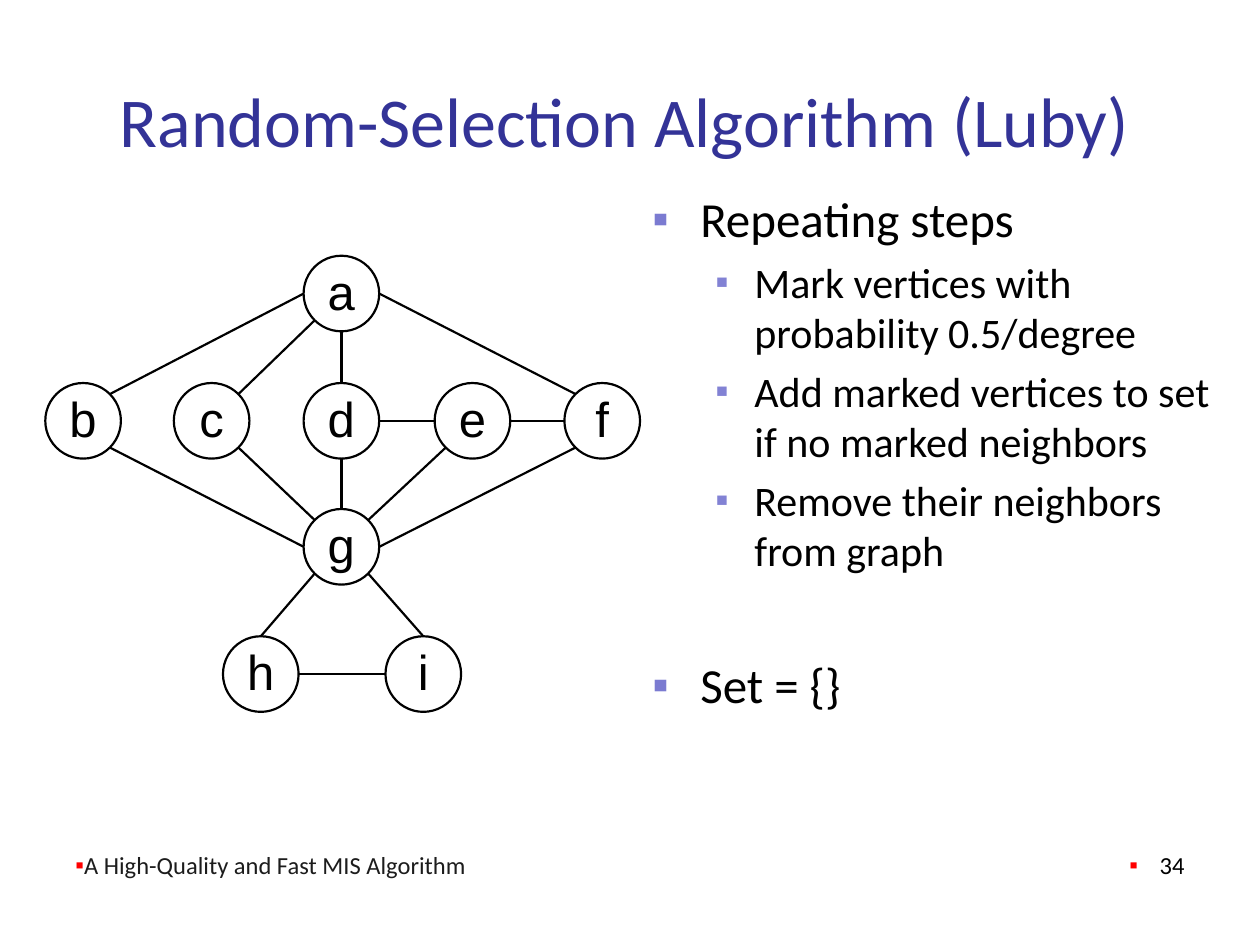
from dataclasses import dataclass
from math import sqrt
from typing import NamedTuple, Optional

from lxml import etree
from pptx import Presentation
from pptx.dml.color import RGBColor
from pptx.enum.shapes import MSO_CONNECTOR, MSO_SHAPE
from pptx.enum.text import MSO_ANCHOR, PP_ALIGN
from pptx.oxml.ns import qn
from pptx.util import Inches, Pt

STRAIGHT, OVAL = MSO_CONNECTOR.STRAIGHT, MSO_SHAPE.OVAL
TOP, MIDDLE, BOTTOM = MSO_ANCHOR.TOP, MSO_ANCHOR.MIDDLE, MSO_ANCHOR.BOTTOM
LEFT, CENTER, RIGHT = PP_ALIGN.LEFT, PP_ALIGN.CENTER, PP_ALIGN.RIGHT


@dataclass(frozen=True)
class Theme:
    title: str = "333397"
    ink: str = "000000"
    footer: str = "1C1C1C"
    bullet_1: str = "7B7BD1"
    bullet_2: str = "8282D4"
    bullet_footer: str = "FF0000"
    font: str = "Calibri"
    node_font: str = "Arial"
    title_size: int = 40
    body_size: int = 28
    sub_size: int = 24
    footer_size: int = 14
    line_width: float = 1.25


class Bullet(NamedTuple):
    color: str
    percent: int
    margin: float
    hanging: float


class Para(NamedTuple):
    text: str
    size: int
    color: str
    bullet: Optional[Bullet] = None
    before: float = 0
    level: int = 0
    align: PP_ALIGN = LEFT


class Node(NamedTuple):
    left: float
    top: float


class Edge(NamedTuple):
    start: str
    start_site: str
    end: str
    end_site: str


THEME = Theme()
DIAMETER = 0.6

# Graph: vertices by their top left corner, edges by compass point on the rim
ROWS = (2.03, 3.04, 4.04, 5.05)
NODES = {
    "a": Node(2.41, ROWS[0]),
    "b": Node(0.36, ROWS[1]),
    "c": Node(1.38, ROWS[1]),
    "d": Node(2.41, ROWS[1]),
    "e": Node(3.45, ROWS[1]),
    "f": Node(4.48, ROWS[1]),
    "g": Node(2.41, ROWS[2]),
    "h": Node(1.77, ROWS[3]),
    "i": Node(3.06, ROWS[3]),
}
EDGES = [Edge(*e.split()) for e in (
    "a W b NE", "a SW c NE", "a S d N", "a E f NW",
    "d E e W", "e E f W",
    "b SE g W", "c SE g NW", "d S g N", "e SW g NE", "f SW g E",
    "g SW h N", "g SE i N", "h E i W",
)]

# Text
LEVEL_1 = Bullet(THEME.bullet_1, 95, 0.38, 0.38)
LEVEL_2 = Bullet(THEME.bullet_2, 90, 0.81, 0.31)
STEPS = (
    "Mark vertices with probability 0.5/degree",
    "Add marked vertices to set if no marked neighbors",
    "Remove their neighbors from graph",
)
BODY = [
    Para("Repeating steps", THEME.body_size, THEME.ink, LEVEL_1),
    *(Para(s, THEME.sub_size, THEME.ink, LEVEL_2, 4.8, 1) for s in STEPS),
    Para("Set = {}", THEME.body_size, THEME.ink, LEVEL_1, 45.4),
]


def rim_point(node: Node, site: str) -> tuple[float, float]:
    """Point on a vertex's circle in the given compass direction."""
    dx = ("E" in site) - ("W" in site)
    dy = ("S" in site) - ("N" in site)
    r = DIAMETER / 2
    reach = r / sqrt(dx * dx + dy * dy)
    return node.left + r + dx * reach, node.top + r + dy * reach


def add_edge(s, edge: Edge) -> None:
    begin = rim_point(NODES[edge.start], edge.start_site)
    end = rim_point(NODES[edge.end], edge.end_site)
    line = s.shapes.add_connector(STRAIGHT, *map(Inches, begin + end))
    line.line.color.rgb = RGBColor.from_string(THEME.ink)
    line.line.width = Pt(THEME.line_width)
    etree.SubElement(line._element.spPr, qn("a:effectLst"))


def set_bullet(p, bullet: Bullet) -> None:
    pPr = p._p.get_or_add_pPr()
    pPr.set("marL", str(Inches(bullet.margin)))
    pPr.set("indent", str(-Inches(bullet.hanging)))
    color = etree.SubElement(pPr, qn("a:buClr"))
    etree.SubElement(color, qn("a:srgbClr"), val=bullet.color)
    etree.SubElement(pPr, qn("a:buSzPct"), val=str(bullet.percent * 1000))
    etree.SubElement(pPr, qn("a:buFont"), typeface=THEME.node_font)
    etree.SubElement(pPr, qn("a:buChar"), char="▪")


def fill_text(tf, paras: list[Para], font: str, anchor: MSO_ANCHOR,
              insets: tuple[float, ...]) -> None:
    left, top, right, bottom = map(Inches, insets)
    frame_format = {
        "word_wrap": True, "vertical_anchor": anchor,
        "margin_left": left, "margin_top": top,
        "margin_right": right, "margin_bottom": bottom,
    }
    for name, value in frame_format.items():
        setattr(tf, name, value)
    for i, para in enumerate(paras):
        p = tf.paragraphs[0] if i == 0 else tf.add_paragraph()
        p.level = para.level
        p.alignment = para.align
        if para.before:
            p.space_before = Pt(para.before)
        if para.bullet:
            set_bullet(p, para.bullet)
        r = p.add_run()
        r.text = para.text
        for name, value in {"name": font, "size": Pt(para.size)}.items():
            setattr(r.font, name, value)
        r.font.color.rgb = RGBColor.from_string(para.color)


def add_text(s, box: tuple[float, ...], paras: list[Para], anchor: MSO_ANCHOR,
             inset_left: float = 0.1) -> None:
    sp = s.shapes.add_textbox(*map(Inches, box))
    fill_text(sp.text_frame, paras, THEME.font, anchor, (inset_left, 0.05, 0.1, 0.05))


def add_node(s, label: str, node: Node) -> None:
    sp = s.shapes.add_shape(OVAL, *map(Inches, (*node, DIAMETER, DIAMETER)))
    sp.shadow.inherit = False
    sp.fill.background()
    sp.line.color.rgb = RGBColor.from_string(THEME.ink)
    sp.line.width = Pt(THEME.line_width)
    para = Para(label, THEME.body_size, THEME.ink, align=CENTER)
    fill_text(sp.text_frame, [para], THEME.node_font, BOTTOM, (0, 0, 0, 0))


def main() -> None:
    prs = Presentation()
    prs.slide_width, prs.slide_height = Inches(10), Inches(7.5)
    s = prs.slides.add_slide(prs.slide_layouts[6])

    # Edges lie behind the vertices
    for edge in EDGES:
        add_edge(s, edge)

    # Title and body
    title = Para("Random-Selection Algorithm (Luby)", THEME.title_size, THEME.title)
    add_text(s, (0.5, 0.6, 9, 0.7), [title], MIDDLE, inset_left=0.45)
    add_text(s, (5.08, 1.45, 4.67, 4.9), BODY, TOP)

    # Footer and slide number
    footer = Para("A High-Quality and Fast MIS Algorithm", THEME.footer_size,
                  THEME.footer, Bullet(THEME.bullet_footer, 100, 0, 0))
    number = Para("34", THEME.footer_size, THEME.ink,
                  Bullet(THEME.bullet_footer, 100, 0.24, 0.24), align=RIGHT)
    add_text(s, (0.5, 6.53, 6.92, 0.5), [footer], BOTTOM)
    add_text(s, (7.42, 6.53, 2.08, 0.5), [number], BOTTOM)

    # Vertices
    for label, node in NODES.items():
        add_node(s, label, node)

    prs.save("out.pptx")


if __name__ == "__main__":
    main()
